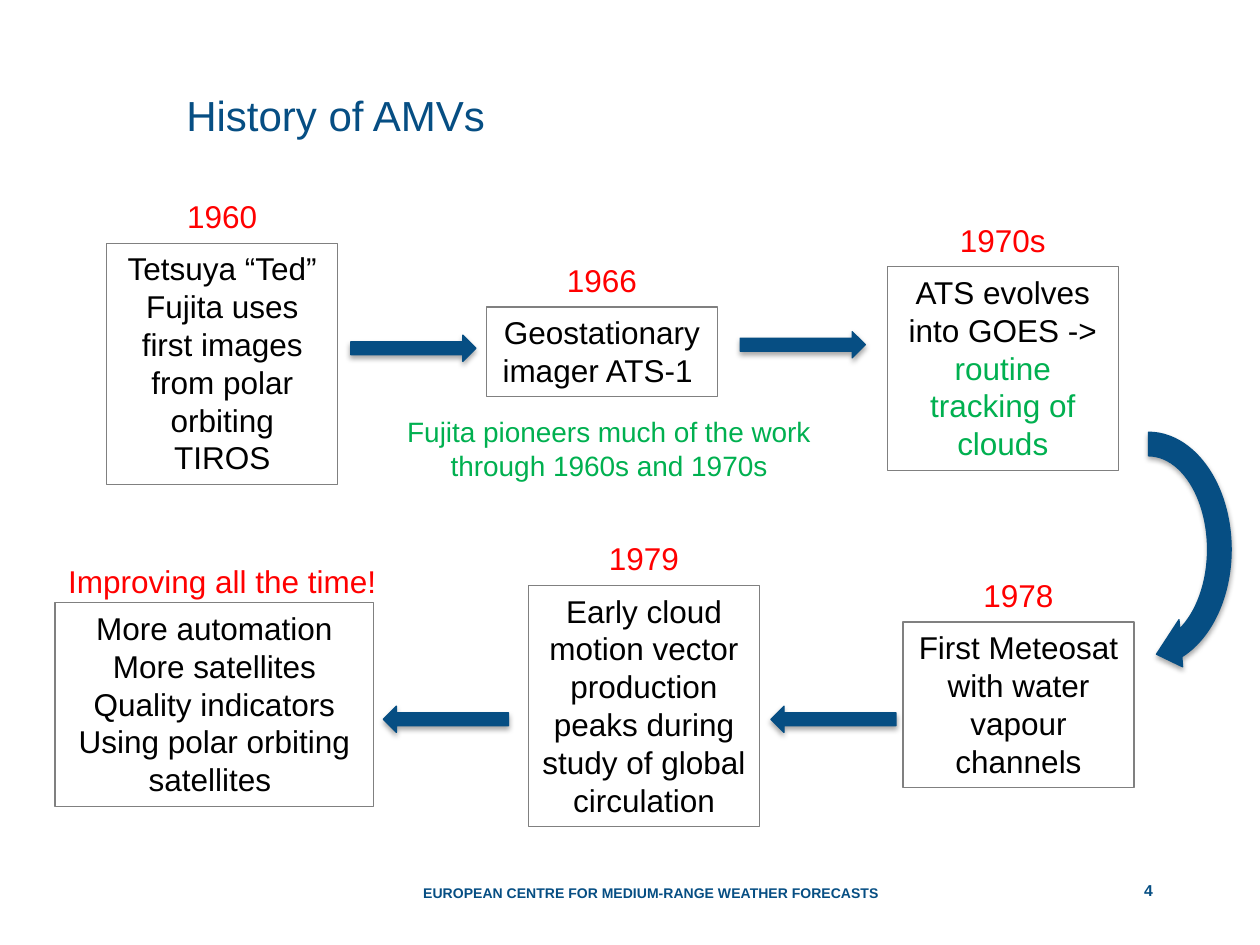
from dataclasses import dataclass

from lxml.etree import SubElement
from pptx import Presentation
from pptx.dml.color import RGBColor
from pptx.enum.shapes import MSO_SHAPE
from pptx.enum.text import MSO_ANCHOR, PP_ALIGN
from pptx.oxml.ns import qn
from pptx.util import Pt


@dataclass(frozen=True)
class Theme:
    """Colours, font and type sizes of the slide."""

    font: str = "Arial"
    navy: str = "064E83"
    red: str = "FF0000"
    green: str = "00B050"
    black: str = "000000"
    grey: str = "808080"
    title: float = 24
    body: float = 18
    note: float = 16
    number: float = 9
    footer: float = 8


THEME = Theme()


def points(box):
    """Turn a box of left, top, width and height into lengths."""
    return [Pt(value) for value in box]


def write_text(frame, text, size=THEME.body, color=THEME.black, bold=False,
               align=PP_ALIGN.CENTER, anchor=MSO_ANCHOR.TOP,
               insets=(7.2, 3.6, 7.2, 3.6), spacing=None, tail="", tail_color=None):
    """Fill a frame with one paragraph per line, then a coloured tail."""
    frame.word_wrap = True
    frame.vertical_anchor = anchor
    (frame.margin_left, frame.margin_top,
     frame.margin_right, frame.margin_bottom) = points(insets)
    for index, line in enumerate(text.split("\n")):
        para = frame.add_paragraph() if index else frame.paragraphs[0]
        para.alignment = align
        if spacing:
            para.line_spacing = Pt(spacing)
        parts = [(line, color)]
        if tail:
            parts.append((tail, tail_color))
        for words, shade in parts:
            span = para.add_run()
            span.text = words
            span.font.name = THEME.font
            span.font.size = Pt(size)
            span.font.bold = bold
            span.font.color.rgb = RGBColor.from_string(shade)


def add_label(page, box, text, **style):
    """Place a plain text box."""
    write_text(page.shapes.add_textbox(*points(box)).text_frame, text, **style)


def add_milestone(page, box, heading, text, heading_box=None, **style):
    """Place an outlined box with a red heading centred on top of it."""
    left, top, width, height = box
    frame = page.shapes.add_shape(MSO_SHAPE.RECTANGLE, *points(box))
    frame.shadow.inherit = False
    frame.fill.background()
    frame.line.color.rgb = RGBColor.from_string(THEME.grey)
    frame.line.width = Pt(0.75)
    write_text(frame.text_frame, text, **style)
    heading_box = heading_box or (left + width / 2 - 44, top - 30, 88, 30)
    add_label(page, heading_box, heading, color=THEME.red)


def add_arrow(page, box, kind=MSO_SHAPE.RIGHT_ARROW, rotation=0, adjustments=()):
    """Place a navy block arrow with a soft shadow below it."""
    arrow = page.shapes.add_shape(kind, *points(box))
    arrow.rotation = rotation
    for index, value in enumerate(adjustments):
        arrow.adjustments[index] = value
    navy = RGBColor.from_string(THEME.navy)
    arrow.fill.solid()
    arrow.fill.fore_color.rgb = navy
    arrow.line.color.rgb = navy
    arrow.line.width = Pt(0.75)
    arrow.shadow.inherit = False
    effects = arrow.element.spPr.find(qn("a:effectLst"))
    shadow = SubElement(effects, qn("a:outerShdw"), blurRad=str(Pt(3.1)),
                        dist=str(Pt(1.8)), dir="5400000", rotWithShape="0")
    shade = SubElement(shadow, qn("a:srgbClr"), val=THEME.black)
    SubElement(shade, qn("a:alpha"), val="35000")


def add_frame(page):
    """Place the title, the footer and the page number."""
    add_label(page, (106.5, 52, 465, 29), "History of AMVs", size=THEME.title,
              color=THEME.navy, align=PP_ALIGN.LEFT, insets=(0, 0, 0, 0), spacing=28)
    add_label(page, (233.3, 497, 271.5, 18),
              "EUROPEAN CENTRE FOR MEDIUM-RANGE WEATHER FORECASTS",
              size=THEME.footer, color=THEME.navy, bold=True, align=PP_ALIGN.LEFT,
              anchor=MSO_ANCHOR.BOTTOM, insets=(8.6, 0, 0, 0))
    add_label(page, (592.5, 497, 127.5, 17), "4", size=THEME.number,
              color=THEME.navy, bold=True, anchor=MSO_ANCHOR.BOTTOM,
              insets=(0, 0, 0, 0))


def add_timeline(page):
    """Place the milestones and the arrows that join them."""
    add_milestone(page, (61, 139, 132, 138), "1960",
                  "Tetsuya “Ted” Fujita uses first images from polar orbiting TIROS")
    add_milestone(page, (278, 175.5, 132, 51), "1966", "Geostationary imager ATS-1 ")
    add_milestone(page, (507, 152.5, 132, 116.5), "1970s", "ATS evolves into GOES -> ",
                  tail="routine tracking of clouds", tail_color=THEME.green)
    add_milestone(page, (516, 355.5, 132, 94.5), "1978",
                  "First Meteosat with water vapour channels")
    add_milestone(page, (302, 334.5, 132, 138), "1979",
                  "Early cloud motion vector production peaks during study of "
                  "global circulation")
    add_milestone(page, (31.5, 344.5, 182, 116.5), "Improving all the time!",
                  "More automation\nMore satellites\nQuality indicators\n"
                  "Using polar orbiting satellites ",
                  heading_box=(30, 317.5, 194, 29))
    add_label(page, (221.5, 233.5, 253, 46),
              "Fujita pioneers much of the work through 1960s and 1970s",
              size=THEME.note, color=THEME.green)
    for left, top, rotation in ((200.5, 191.5, 0), (423, 189.5, 0),
                                (440.5, 403.5, 180), (219, 403.5, 180)):
        add_arrow(page, (left, top, 71.5, 15), rotation=rotation)
    add_arrow(page, (582.5, 260, 147.5, 108), MSO_SHAPE.CIRCULAR_ARROW, 90,
              (0.125, 8.79, 204.58, 108, 0.125))


def main():
    """Build the deck and save it."""
    deck = Presentation()
    deck.slide_width, deck.slide_height = Pt(720), Pt(540)
    page = deck.slides.add_slide(deck.slide_layouts[6])
    add_frame(page)
    add_timeline(page)
    deck.save("out.pptx")


if __name__ == "__main__":
    main()
